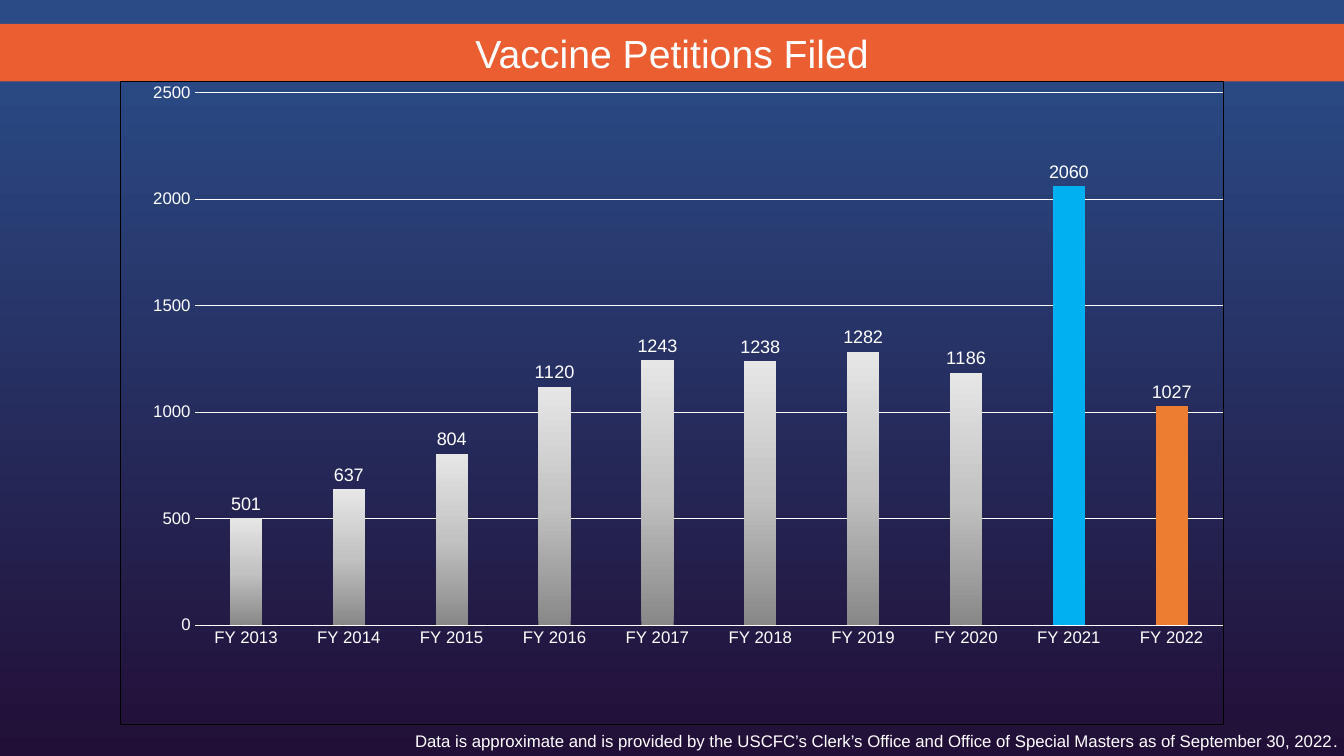
import copy
from dataclasses import dataclass

import pptx
import pptx.chart.data
import pptx.dml.color
import pptx.enum.chart
import pptx.enum.text
import pptx.oxml
import pptx.oxml.ns
import pptx.util

Cm = pptx.util.Cm
Pt = pptx.util.Pt
RGB = pptx.dml.color.RGBColor.from_string
qn = pptx.oxml.ns.qn


@dataclass(frozen=True)
class Theme:
    """Colours, fonts and type sizes of the slide."""
    text: str = "FFFFFF"
    band: str = "EA5E32"
    border: str = "000000"
    peak: str = "00B0F0"
    latest: str = "ED7D31"
    backdrop: tuple = ((0, "220F37"), (0.93, "2A4B86"))
    bars: tuple = ((0, "898888"), (0.5, "C3C2C2"), (1, "E7E6E6"))
    face: str = "Arial"
    period_face: str = "Calibri"
    title_size: float = 28
    value_size: float = 12.9
    small_size: float = 12
    hairline: float = 0.75


THEME = Theme()
HEADING = "Vaccine Petitions Filed"
PETITIONS = {
    "FY 2013": 501, "FY 2014": 637, "FY 2015": 804, "FY 2016": 1120,
    "FY 2017": 1243, "FY 2018": 1238, "FY 2019": 1282, "FY 2020": 1186,
    "FY 2021": 2060, "FY 2022": 1027,
}
HIGHLIGHTS = {"FY 2021": THEME.peak, "FY 2022": THEME.latest}
SOURCE_NOTE = ("Data is approximate and is provided by the USCFC’s Clerk’s Office "
               "and Office of Special Masters as of September 30, 2022")
PLOT_LAYOUT = {"layoutTarget": "inner", "xMode": "edge", "yMode": "edge",
               "x": 0.07, "y": 0.02, "w": 0.93, "h": 0.83}
PLOT_LAYOUT.update(x=0.067, y=0.017, w=0.933, h=0.828)


def apply(target, **values):
    """Set every given format value on the target."""
    for attribute, value in values.items():
        setattr(target, attribute, value)


def set_font(font, size, face=THEME.face):
    """Give a font its face, size and the text colour."""
    apply(font, name=face, size=Pt(size))
    font.color.rgb = RGB(THEME.text)


def paint(fill, colour):
    """Fill with one solid colour."""
    fill.solid()
    fill.fore_color.rgb = RGB(colour)


def paint_upward(fill, owner, stops):
    """Fill the owner element with a gradient that runs from bottom to top."""
    fill.gradient()
    fill.gradient_angle = 90
    stop_list = next(owner.iter(qn("a:gsLst")))
    for _ in stops[2:]:
        stop_list.append(copy.deepcopy(stop_list[-1]))
    for stop, (position, colour) in zip(fill.gradient_stops, stops):
        stop.position = position
        stop.color.rgb = RGB(colour)


def frame_chart(chart):
    """Place the plot area and draw a thin border round the chart."""
    namespaces = pptx.oxml.ns.nsdecls("c", "a")
    entries = "".join(f'<c:{tag} val="{value}"/>' for tag, value in PLOT_LAYOUT.items())
    layout = pptx.oxml.parse_xml(
        f"<c:layout {namespaces}><c:manualLayout>{entries}</c:manualLayout></c:layout>")
    chart_space = chart._chartSpace
    plot_area = next(chart_space.iter(qn("c:plotArea")))
    for default_layout in plot_area.findall(qn("c:layout")):
        plot_area.remove(default_layout)
    plot_area.insert(0, layout)
    border = pptx.oxml.parse_xml(
        f'<c:spPr {namespaces}><a:noFill/><a:ln w="{Pt(THEME.hairline)}"><a:solidFill>'
        f'<a:srgbClr val="{THEME.border}"/></a:solidFill></a:ln></c:spPr>')
    chart_space.find(qn("c:chart")).addnext(border)


def style_axes(chart):
    """Format both axes and the gridlines."""
    for axis in (chart.category_axis, chart.value_axis):
        apply(axis, major_tick_mark=pptx.enum.chart.XL_TICK_MARK.NONE,
              minor_tick_mark=pptx.enum.chart.XL_TICK_MARK.NONE)
        set_font(axis.tick_labels.font, THEME.small_size)
        axis.format.line.fill.background()
    apply(chart.value_axis, minimum_scale=0, maximum_scale=2500, major_unit=500,
          has_major_gridlines=True)
    gridline = chart.value_axis.major_gridlines.format.line
    gridline.color.rgb = RGB(THEME.text)
    gridline.width = Pt(THEME.hairline)


def style_bars(bars):
    """Colour the bars and label their values."""
    bars.invert_if_negative = False
    paint_upward(bars.format.fill, bars._element, THEME.bars)
    years = list(PETITIONS)
    for year, colour in HIGHLIGHTS.items():
        paint(bars.points[years.index(year)].format.fill, colour)
    apply(bars.data_labels, show_value=True,
          position=pptx.enum.chart.XL_LABEL_POSITION.OUTSIDE_END)
    set_font(bars.data_labels.font, THEME.value_size)


def add_petitions_chart(slide, left, top, width, height):
    """Add the column chart of petitions per fiscal year."""
    petitions = pptx.chart.data.CategoryChartData()
    petitions.categories = list(PETITIONS)
    petitions.add_series(HEADING, list(PETITIONS.values()))
    chart = slide.shapes.add_chart(
        pptx.enum.chart.XL_CHART_TYPE.COLUMN_CLUSTERED,
        left, top, width, height, petitions).chart
    apply(chart, has_title=False, has_legend=False)
    set_font(chart.font, THEME.small_size)
    columns = chart.plots[0]
    apply(columns, gap_width=219, overlap=-27, vary_by_categories=False)
    style_axes(chart)
    style_bars(columns.series[0])
    frame_chart(chart)


def add_title_band(slide, left, top, width, height):
    """Turn the title placeholder into the coloured band."""
    band = slide.shapes.title
    apply(band, left=left, top=top, width=width, height=height)
    paint(band.fill, THEME.band)
    apply(band.text_frame, text=HEADING, word_wrap=True,
          auto_size=pptx.enum.text.MSO_AUTO_SIZE.NONE,
          vertical_anchor=pptx.enum.text.MSO_ANCHOR.MIDDLE)
    heading = band.text_frame.paragraphs[0]
    heading.alignment = pptx.enum.text.PP_ALIGN.CENTER
    set_font(heading.runs[0].font, THEME.title_size)


def add_source_note(slide, left, top, width, height):
    """Add the line that names the source of the data."""
    note = slide.shapes.add_textbox(left, top, width, height).text_frame
    apply(note, word_wrap=False, auto_size=pptx.enum.text.MSO_AUTO_SIZE.SHAPE_TO_FIT_TEXT)
    for words, face in ((SOURCE_NOTE, THEME.face), (".", THEME.period_face)):
        run = note.paragraphs[0].add_run()
        run.text = words
        set_font(run.font, THEME.small_size, face)


def main():
    """Build and save the slide."""
    deck = pptx.Presentation()
    apply(deck, slide_width=Cm(33.87), slide_height=Cm(19.05))
    slide = deck.slides.add_slide(deck.slide_layouts.get_by_name("Title Only"))
    paint_upward(slide.background.fill, slide._element, THEME.backdrop)
    add_petitions_chart(slide, Cm(3.03), Cm(2.05), Cm(27.81), Cm(16.23))
    add_title_band(slide, Cm(0), Cm(0.6), deck.slide_width, Cm(1.45))
    add_source_note(slide, Cm(10.21), Cm(18.29), Cm(23.95), Cm(0.76))
    deck.save("out.pptx")


if __name__ == "__main__":
    main()
